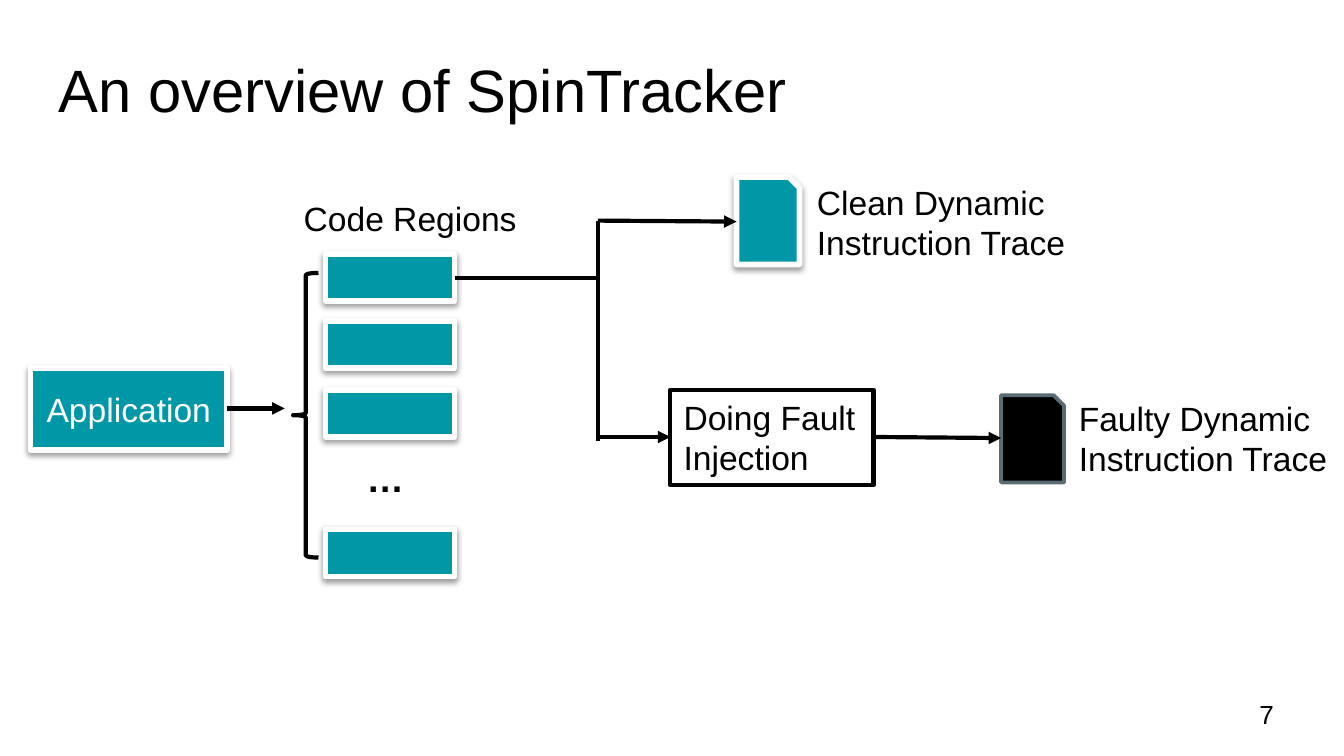
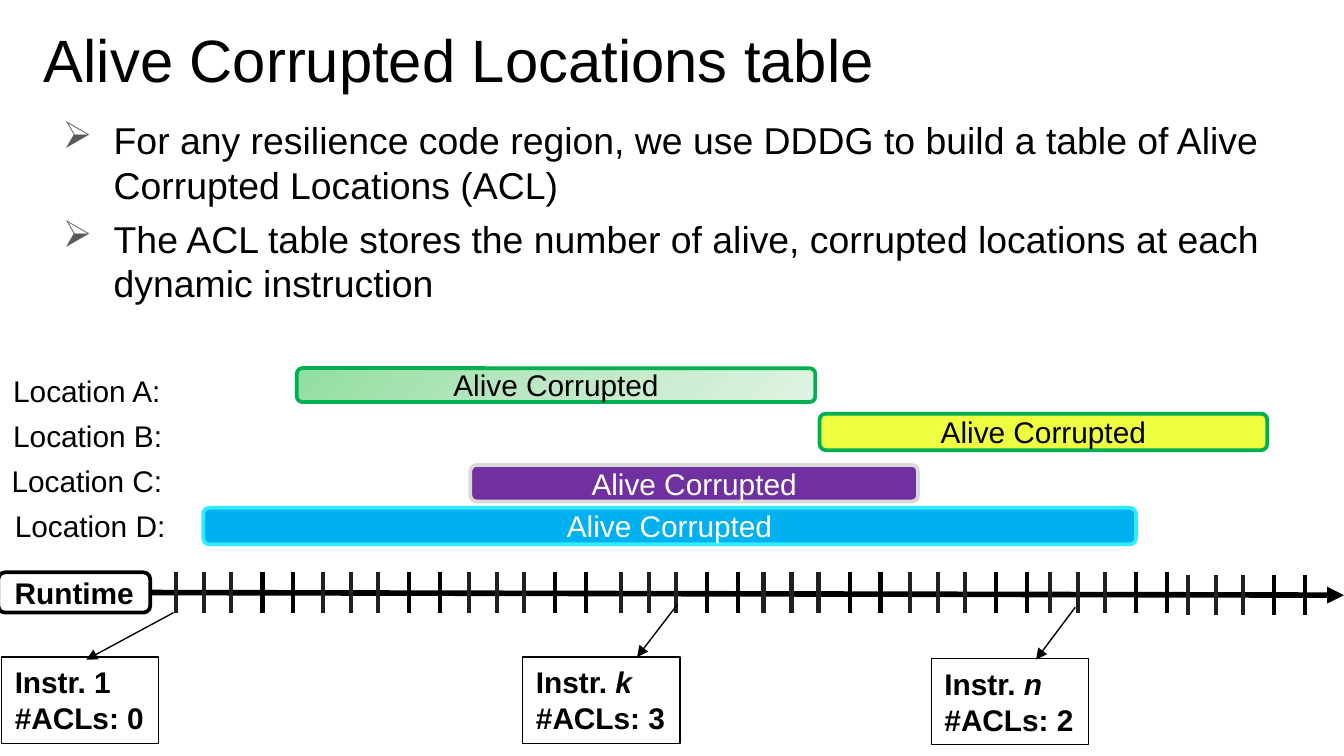
from copy import deepcopy

from lxml.etree import SubElement
from pptx import Presentation
from pptx.dml.color import RGBColor
from pptx.enum.shapes import MSO_CONNECTOR, MSO_SHAPE
from pptx.enum.text import MSO_ANCHOR, MSO_AUTO_SIZE, PP_ALIGN
from pptx.oxml.ns import qn
from pptx.util import Cm, Pt

HUES = {
    "black": "000000", "white": "FFFFFF", "teal": "0097A7", "slate": "596B73",
    "green": "00B050", "lemon": "EEFF41", "plum": "7030A0", "silver": "D9D9D9",
    "sky": "00B0F0", "cyan": "31EBFF", "tick": "202020", "bullet": "595959",
}
FADE = ((0, "91DEA0"), (0.5, "BDE8C5"), (1, "DFF3E3"))
FONT = "Arial"
SIZES = {"title": 32, "body": 20, "label": 18, "small": 16, "page": 14}


def tint(name):
    return RGBColor.from_string(HUES[name])


def apply(target, values):
    for name, value in values.items():
        setattr(target, name, value)


def shift(area, x, y, *size):
    return (area[0] + x, area[1] + y, *size)


def write(frame, lines, size="label", hue="black", bold=False, wrap=True,
          align=PP_ALIGN.LEFT, anchor=MSO_ANCHOR.TOP, pad=0.13):
    apply(frame, {
        "word_wrap": wrap, "vertical_anchor": anchor,
        "margin_left": Cm(0.25), "margin_right": Cm(0.25),
        "margin_top": Cm(pad), "margin_bottom": Cm(pad),
    })
    if not wrap:
        frame.auto_size = MSO_AUTO_SIZE.SHAPE_TO_FIT_TEXT
    for index, line in enumerate(lines):
        para = frame.add_paragraph() if index else frame.paragraphs[0]
        para.alignment = align
        for part, slant in [(line, False)] if isinstance(line, str) else line:
            run = para.add_run()
            run.text = part
            apply(run.font, {"name": FONT, "size": Pt(SIZES[size]),
                             "bold": bold, "italic": slant})
            run.font.color.rgb = tint(hue)


def label(slide, box, lines, **style):
    frame = slide.shapes.add_textbox(*map(Cm, box)).text_frame
    write(frame, lines, **style)
    return frame


def block(slide, kind, box, fill=None, edge="black", weight=2.25, shade=False):
    shape = slide.shapes.add_shape(kind, *map(Cm, box))
    shape.shadow.inherit = False
    if fill:
        shape.fill.solid()
        shape.fill.fore_color.rgb = tint(fill)
    else:
        shape.fill.background()
    shape.line.color.rgb = tint(edge)
    shape.line.width = Pt(weight)
    if shade:
        effect = shape._element.spPr.find(qn("a:effectLst"))
        drop = SubElement(effect, qn("a:outerShdw"), blurRad="40000",
                          dist="20000", dir="5400000", rotWithShape="0")
        color = SubElement(drop, qn("a:srgbClr"), val=HUES["black"])
        SubElement(color, qn("a:alpha"), val="38000")
    return shape


def teal(slide, kind, box):
    return block(slide, kind, box, "teal", "white", 3, True)


def link(slide, area, start, end, weight=2.25, hue="black", head=True):
    ends = shift(area, *start) + shift(area, *end)
    line = slide.shapes.add_connector(MSO_CONNECTOR.STRAIGHT, *map(Cm, ends))
    line.line.color.rgb = tint(hue)
    line.line.width = Pt(weight)
    props = line._element.spPr
    if head:
        SubElement(props.find(qn("a:ln")), qn("a:tailEnd"), type="triangle")
    SubElement(props, qn("a:effectLst"))


def title(slide, box, text):
    label(slide, box, [text], size="title", pad=0.25)


def number(slide, box, text):
    label(slide, box, [text], size="page", anchor=MSO_ANCHOR.MIDDLE, pad=0.25)


def source(slide, area):
    app = teal(slide, MSO_SHAPE.RECTANGLE, shift(area, 0.58, 3.96, 3.71, 1.55))
    write(app.text_frame, ["Application"], hue="white",
          align=PP_ALIGN.CENTER, anchor=MSO_ANCHOR.MIDDLE)
    link(slide, area, (4.29, 4.72), (5.38, 4.72))
    for top in (1.8, 3.07, 4.37, 7.01):
        teal(slide, MSO_SHAPE.RECTANGLE, shift(area, 6.15, top, 2.44, 0.89))
    label(slide, shift(area, 6.68, 5.48, 1.22, 1.12), ["…"],
          size="body", bold=True, wrap=False)
    block(slide, MSO_SHAPE.LEFT_BRACE, shift(area, 5.54, 2.16, 0.48, 5.38))
    label(slide, shift(area, 5.49, 0.61, 4.57, 1.02), ["Code Regions"], wrap=False)


def traces(slide, area):
    doc = MSO_SHAPE.SNIP_1_RECTANGLE
    teal(slide, doc, shift(area, 13.92, 0.35, 1.19, 1.65))
    label(slide, shift(area, 15.19, 0.3, 6.68, 1.8),
          ["Clean Dynamic Instruction Trace"])
    block(slide, doc, shift(area, 18.92, 4.47, 1.19, 1.65), "black", "slate", 2)
    label(slide, shift(area, 20.14, 4.39, 5.26, 1.8),
          ["Faulty Dynamic Instruction Trace"])
    for start, end, head in (
        ((8.59, 2.26), (11.3, 2.26), False),
        ((11.3, 1.17), (13.92, 1.19), True),
        ((16.54, 5.26), (18.92, 5.28), True),
        ((11.3, 1.17), (11.3, 5.33), False),
        ((11.3, 5.26), (12.67, 5.26), True),
    ):
        link(slide, area, start, end, head=head)
    fault = block(slide, MSO_SHAPE.RECTANGLE, shift(area, 12.67, 4.37, 3.84, 1.8))
    write(fault.text_frame, ["Doing Fault", "Injection"])


def points(slide, box, lines):
    frame = label(slide, box, lines, size="body", pad=0.25)
    for para, gap in zip(frame.paragraphs, (5, 16)):
        para.space_after = Pt(gap)
        props = para._p.get_or_add_pPr()
        props.set("marL", str(Cm(0.96)))
        props.set("indent", str(-Cm(0.96)))
        color = SubElement(props, qn("a:buClr"))
        SubElement(color, qn("a:srgbClr"), val=HUES["bullet"])
        SubElement(props, qn("a:buChar"), char="➢")


def blend(shape):
    fill = shape.fill
    fill.gradient()
    fill.gradient_angle = 315
    stops = shape._element.spPr.find(".//" + qn("a:gsLst"))
    stops.insert(1, deepcopy(stops[0]))
    for stop, (place, color) in zip(fill.gradient_stops, FADE):
        stop.position = place
        stop.color.rgb = RGBColor.from_string(color)


def bars(slide, area):
    for name, left, top, box, fill, edge, hue in (
        ("A", 0, 0.41, (5.61, 0.46, 9.8, 0.64), None, "green", "black"),
        ("B", 0, 1.27, (15.49, 1.32, 8.46, 0.69), "lemon", "green", "black"),
        ("C", -0.03, 2.11, (8.89, 2.29, 8.46, 0.69), "plum", "silver", "white"),
        ("D", 0.03, 2.97, (3.84, 3.1, 17.63, 0.69), "sky", "cyan", "white"),
    ):
        bar = block(slide, MSO_SHAPE.FLOWCHART_ALTERNATE_PROCESS,
                    shift(area, *box), fill, edge, 2)
        if not fill:
            blend(bar)
        write(bar.text_frame, ["Alive Corrupted"], size="small", hue=hue,
              align=PP_ALIGN.CENTER, anchor=MSO_ANCHOR.MIDDLE)
        label(slide, shift(area, left, top, 3.38, 0.94), [f"Location {name}:"],
              size="small", wrap=False)


def axis(slide, area):
    link(slide, area, (2.84, 0.38), (25.4, 0.43), 3)
    run = block(slide, MSO_SHAPE.ROUNDED_RECTANGLE,
                shift(area, -0.03, 0, 2.87, 0.76), weight=2)
    write(run.text_frame, ["Runtime"], size="small", bold=True,
          align=PP_ALIGN.CENTER, anchor=MSO_ANCHOR.MIDDLE)
    starts = (3.33, 6.1, 8.86, 11.73, 14.43, 17.2, 19.84, 22.45)
    for start in starts:
        top = 0.04 if start == starts[-1] else 0
        for index, step in enumerate((0, 0.53, 1.04, 1.63, 2.21)):
            x = start + step
            link(slide, area, (x, top), (x, top + 0.76),
                 hue="tick" if index < 3 else "black", head=False)


def notes(slide, area):
    for left, top, start, end, name, count in (
        (0.03, 1.6, (3.28, 0.76), (1.63, 1.65), "1", 0),
        (9.88, 1.6, (12.8, 0.61), (12.04, 1.6), "k", 3),
        (17.6, 1.63, (20.32, 0.66), (19.58, 1.65), "n", 2),
    ):
        link(slide, area, start, end, 0.75)
        note = block(slide, MSO_SHAPE.RECTANGLE,
                     shift(area, left, top, 2.97, 1.63), weight=0.75)
        head = [("Instr.", False), (f" {name}", name.isalpha())]
        write(note.text_frame, [head, f"#ACLs: {count}"],
              size="small", bold=True, wrap=False)


def main():
    deck = Presentation()
    apply(deck, {"slide_width": Cm(25.4), "slide_height": Cm(14.29)})
    blank = deck.slide_layouts[6]

    view = deck.slides.add_slide(blank)
    title(view, (0.86, 0.74, 23.67, 1.6), "An overview of SpinTracker")
    number(view, (23.55, 12.95, 1.52, 1.09), "7")
    chart = (0, 3)
    source(view, chart)
    traces(view, chart)

    table = deck.slides.add_slide(blank)
    title(table, (0.58, 0.18, 23.67, 1.6), "Alive Corrupted Locations table")
    points(table, (0.94, 1.96, 23.67, 2.46), [
        "For any resilience code region, we use DDDG to build a table of "
        "Alive Corrupted Locations (ACL)",
        "The ACL table stores the number of alive, corrupted locations at "
        "each dynamic instruction",
    ])
    bars(table, (0, 6.5))
    clock = (0, 10.82)
    axis(table, clock)
    notes(table, clock)

    deck.save("out.pptx")


if __name__ == "__main__":
    main()
